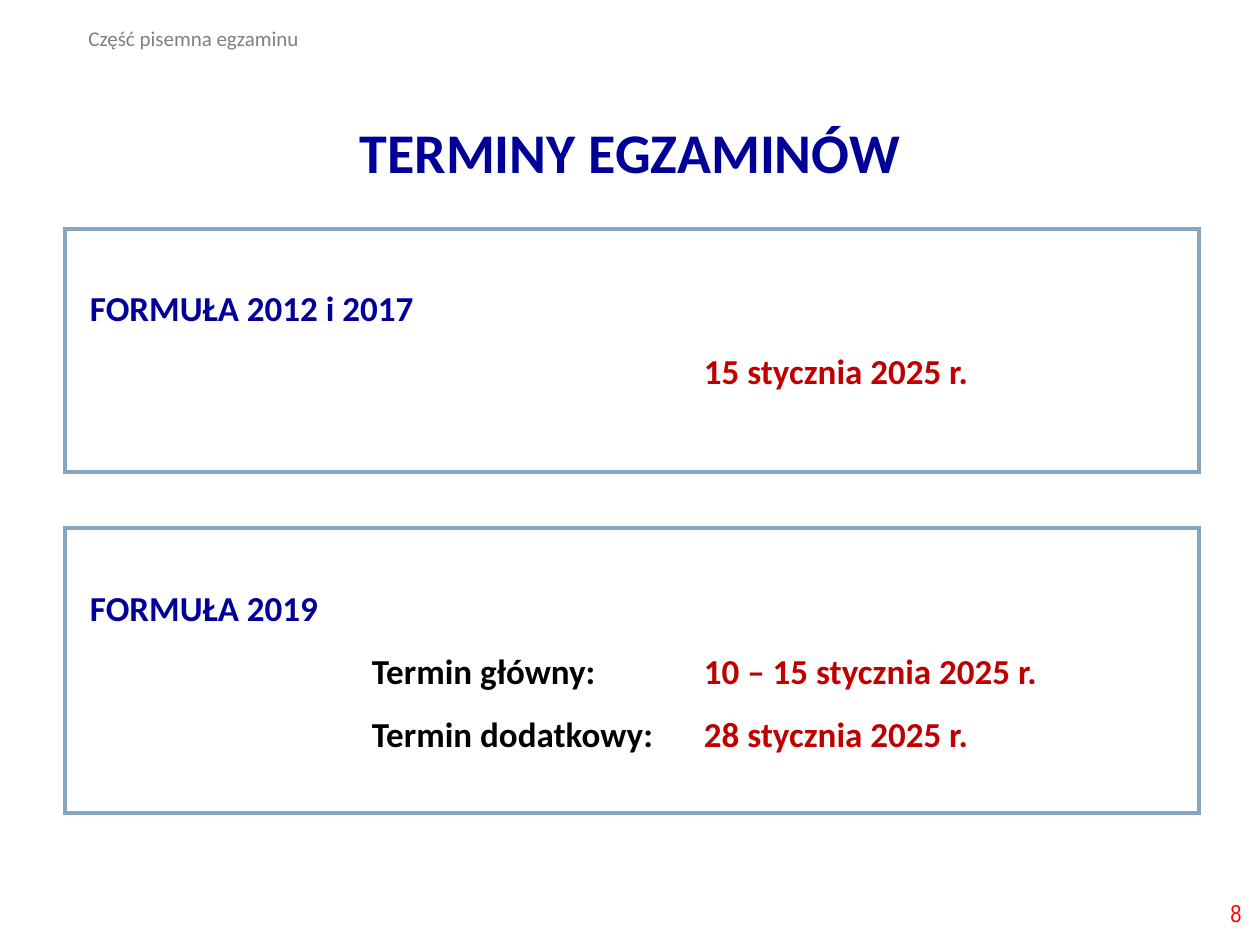
from pptx import Presentation
from pptx.dml.color import RGBColor
from pptx.enum.shapes import MSO_SHAPE
from pptx.enum.text import MSO_ANCHOR, PP_ALIGN
from pptx.oxml.ns import qn
from pptx.util import Emu, Pt
from lxml import etree

RECTANGLE = MSO_SHAPE.RECTANGLE
TOP, MIDDLE = MSO_ANCHOR.TOP, MSO_ANCHOR.MIDDLE
LEFT, CENTER, RIGHT = PP_ALIGN.LEFT, PP_ALIGN.CENTER, PP_ALIGN.RIGHT

PX = 914400 / 126
COLORS = {
    "navy": "000099",
    "red": "C00000",
    "black": "000000",
    "gray": "808080",
    "number": "FF0000",
    "border": "86A5BE",
}
PANEL_LEFT_INSET = 25
PANEL_TOP_INSET = 58
TAB_STOPS = (282, 614)


def px(value):
    return Emu(round(value * PX))


def color(name):
    return RGBColor.from_string(COLORS[name])


def add_text(para, text, size=20, tint="black", bold=False, font="Calibri"):
    span = para.add_run()
    span.text = text
    span.font.name = font
    span.font.size = Pt(size)
    span.font.bold = bold
    span.font.color.rgb = color(tint)


def place(shape, left, top, width, height):
    shape.left, shape.top = px(left), px(top)
    shape.width, shape.height = px(width), px(height)


def add_title(page, text, *area):
    title = page.shapes.title
    place(title, *area)
    title.text_frame.vertical_anchor = MIDDLE
    para = title.text_frame.paragraphs[0]
    para.alignment = CENTER
    para.line_spacing = 1.5
    add_text(para, text, size=32, tint="navy", bold=True)


def add_label(page, text, *area, align=LEFT, anchor=TOP, **style):
    box = page.shapes.add_textbox(*map(px, area))
    frame = box.text_frame
    frame.word_wrap = True
    frame.vertical_anchor = anchor
    frame.paragraphs[0].alignment = align
    add_text(frame.paragraphs[0], text, **style)


def set_tabs(para, stops):
    tabs = etree.SubElement(para._p.get_or_add_pPr(), qn("a:tabLst"))
    for stop in stops:
        etree.SubElement(tabs, qn("a:tab"), pos=str(px(stop)), algn="l")


def add_panel(page, heading, dates, *area):
    panel = page.shapes.add_shape(RECTANGLE, *map(px, area))
    panel.shadow.inherit = False
    panel.fill.background()
    panel.line.color.rgb = color("border")
    panel.line.width = Pt(2.25)
    etree.SubElement(panel.line._get_or_add_ln(), qn("a:miter"), lim="800000")
    frame = panel.text_frame
    frame.word_wrap = True
    frame.vertical_anchor = TOP
    frame.margin_left = px(PANEL_LEFT_INSET)
    frame.margin_top = px(PANEL_TOP_INSET)

    para = frame.paragraphs[0]
    para.alignment = LEFT
    add_text(para, heading, tint="navy", bold=True)
    for label, date in dates:
        para = frame.add_paragraph()
        para.alignment = LEFT
        para.line_spacing = 1.5
        set_tabs(para, TAB_STOPS)
        add_text(para, f"\t{label}\t", bold=True)
        add_text(para, date, tint="red", bold=True)


def main():
    deck = Presentation()
    deck.slide_width, deck.slide_height = px(1260), px(945)
    page = deck.slides.add_slide(deck.slide_layouts[5])

    add_title(page, "TERMINY EGZAMINÓW", 87, 77, 1086, 115)
    add_label(page, "Część pisemna egzaminu", 76, 19, 336, 38, size=12, tint="gray")
    add_panel(page, "FORMUŁA 2012 i 2017", [("", "15 stycznia 2025 r.")],
              65, 229, 1134, 243)
    add_panel(page, "FORMUŁA 2019",
              [("Termin główny:", "10 – 15 stycznia 2025 r."),
               ("Termin dodatkowy:", "28 stycznia 2025 r.")],
              65, 528, 1134, 285)
    add_label(page, "8", 970, 888, 284, 50, align=RIGHT, anchor=MIDDLE,
              size=14, tint="number", font="Arial Narrow")
    deck.save("out.pptx")


if __name__ == "__main__":
    main()
